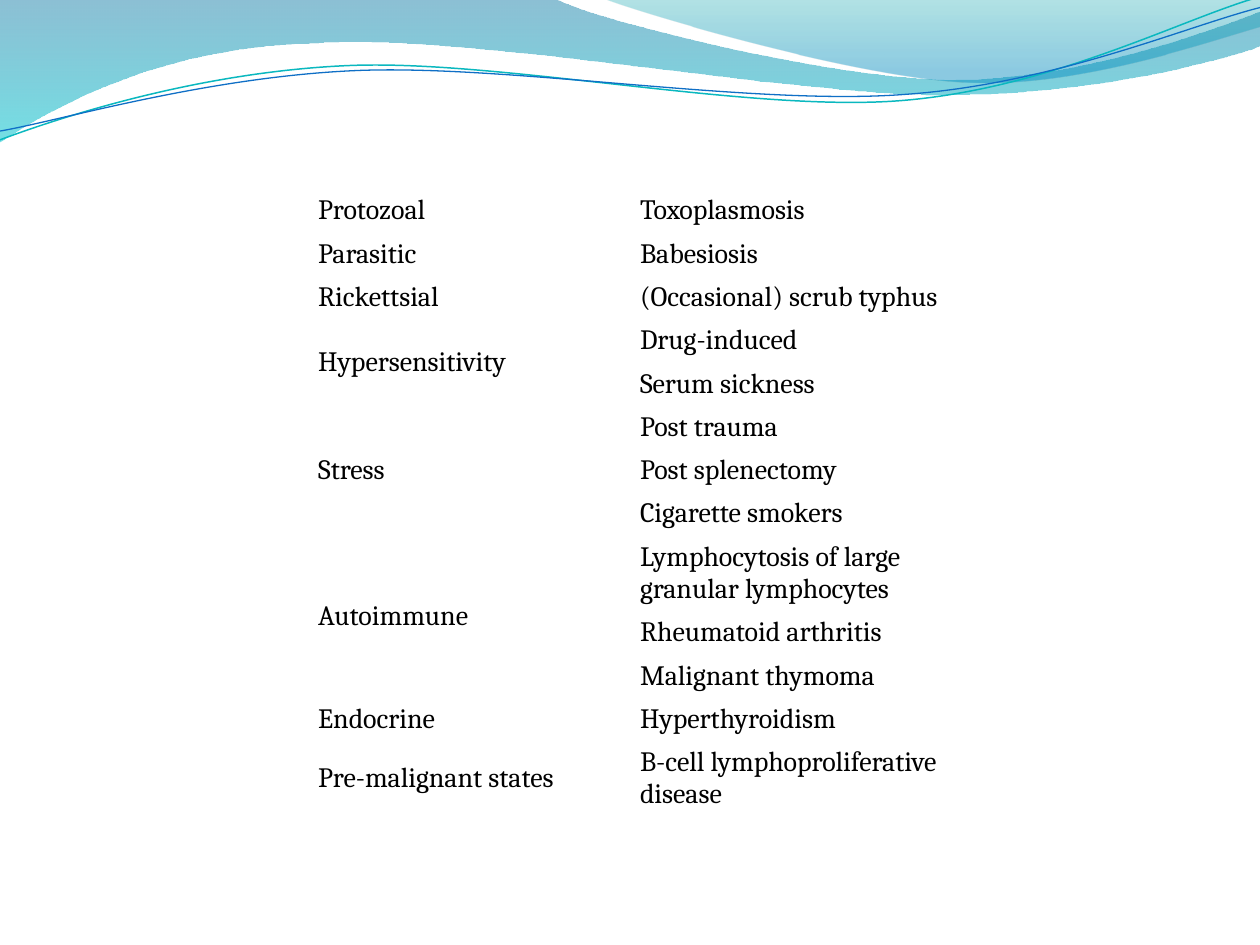
from math import cos, radians, sin

from lxml.etree import SubElement
from pptx import Presentation
from pptx.dml.color import RGBColor
from pptx.enum.text import MSO_ANCHOR
from pptx.oxml.ns import qn
from pptx.util import Inches, Pt

COLORS = {
    "deep_blue": "0074A1", "cyan": "00C6CF", "teal": "00A1A9", "sky": "008BBF",
    "teal_line": "0AB8BF", "blue_line": "0F6FC6", "text": "000000",
}

# Outlines in inches from the corner of the header: a pair is a straight step,
# six numbers are a cubic curve (two control points and an end point).
WIDE_WAVE = [
    (0, 0), (4.4, -0.01), (4.76, 0.17, 6.64, 0.63, 7.58, 0.63),
    (8.53, 0.63, 9.58, 0.26, 10, 0.09), (10.01, 0.36),
    (9.83, 0.44, 8.7, 0.76, 7.46, 0.75), (6.22, 0.75, 3.82, 0.28, 2.57, 0.34),
    (1.29, 0.36, 0.46, 0.83, -0.01, 1.13), (0, 0),
]
RIGHT_WAVE = [
    (4.79, -0.01), (5.09, 0.11, 6.82, 0.62, 7.69, 0.65),
    (8.56, 0.69, 9.61, 0.32, 10, 0.21), (10, 0), (4.79, -0.01),
]
TEAL_STROKE = [
    (0, 1.11), (0.48, 0.93, 1.58, 0.57, 2.77, 0.52),
    (3.95, 0.47, 5.93, 0.89, 7.13, 0.8), (8.33, 0.71, 9.38, 0.15, 9.98, -0.02),
]
BLUE_STROKE = [
    (0, 1.04), (0.47, 0.96, 1.64, 0.61, 2.83, 0.56),
    (4.03, 0.51, 5.97, 0.84, 7.17, 0.75), (8.36, 0.67, 9.41, 0.21, 10, 0.06),
]
# Outline and gradient stops (position, colour, opacity in percent)
WAVES = [
    (WIDE_WAVE, [(0, "deep_blue", 45), (1, "cyan", 55)]),
    (RIGHT_WAVE, [(0, "teal", 30), (0.8, "sky", 45)]),
]
STROKES = [(TEAL_STROKE, "teal_line", 0.85), (BLUE_STROKE, "blue_line", 0.75)]
STROKE_TILT = 2.7
STROKE_CENTER = (4.99, 0.58)

CAUSES = [
    ("Protozoal", ["Toxoplasmosis"]),
    ("Parasitic", ["Babesiosis"]),
    ("Rickettsial", ["(Occasional) scrub typhus"]),
    ("Hypersensitivity", ["Drug-induced", "Serum sickness"]),
    ("Stress", ["Post trauma", "Post splenectomy", "Cigarette smokers"]),
    ("Autoimmune", ["Lymphocytosis of large granular lymphocytes",
                    "Rheumatoid arthritis", "Malignant thymoma"]),
    ("Endocrine", ["Hyperthyroidism"]),
    ("Pre-malignant states", ["B-cell lymphoproliferative disease"]),
]
ROW_HEIGHT, TALL_ROW_HEIGHT = Inches(0.31), Inches(0.54)
ONE_LINE_CHARACTERS = 26
CELL_FORMAT = {
    "vertical_anchor": MSO_ANCHOR.MIDDLE,
    "margin_left": Pt(5.4), "margin_right": Pt(5.4),
    "margin_top": Pt(3.2), "margin_bottom": Pt(3.2),
}
FONT_FORMAT = {"name": "Cambria", "size": Pt(16), "bold": False}
TABLE_FORMAT = {"first_row": False, "horz_banding": False}


def rgb(name):
    return RGBColor.from_string(COLORS[name])


def set_all(target, values):
    for name, value in values.items():
        setattr(target, name, value)


def level(point):
    """Turn a point of a tilted stroke back to where it lies untilted."""
    angle = radians(STROKE_TILT)
    center_x, center_y = STROKE_CENTER
    x, y = point[0] - center_x, point[1] - center_y
    return (center_x + x * cos(angle) - y * sin(angle),
            center_y + x * sin(angle) + y * cos(angle))


def add_outline(shapes, left, top, outline, tilted=False):
    points = [pair for step in outline for pair in zip(step[::2], step[1::2])]
    if tilted:
        points = [level(point) for point in points]
    corners = [(left + Inches(x), top + Inches(y)) for x, y in points]
    builder = shapes.build_freeform(*corners[0])
    builder.add_line_segments(corners[1:], close=outline[0] == outline[-1])
    shape = builder.convert_to_shape()
    shape.shadow.inherit = False
    if tilted:
        shape.rotation = 360 - STROKE_TILT
    bend(shape, outline)
    return shape


def bend(shape, outline):
    """Join the three straight steps that stand for each curve into one cubic."""
    lines = iter(list(shape._element.iter(qn("a:lnTo"))))
    for step in outline[1:]:
        first, *others = [next(lines) for _ in step[::2]]
        if others:
            first.tag = qn("a:cubicBezTo")
        for other in others:
            first.append(other[0])
            other.getparent().remove(other)


def fill_downward(shape, stops):
    shape.fill.gradient()
    shape.fill.gradient_angle = 270
    for stop, (position, color, opacity) in zip(shape.fill.gradient_stops, stops):
        stop.position = position
        stop.color.rgb = rgb(color)
    tints = shape.fill._xPr.iter(qn("a:srgbClr"))
    for tint, (position, color, opacity) in zip(tints, stops):
        SubElement(tint, qn("a:alpha"), val=str(opacity * 1000))


def add_header(page, left, top):
    for outline, stops in WAVES:
        wave = add_outline(page.shapes, left, top, outline)
        fill_downward(wave, stops)
        wave.line.fill.background()
    strokes = page.shapes.add_group_shape()
    for outline, color, width in STROKES:
        stroke = add_outline(strokes.shapes, left, top, outline, tilted=True)
        stroke.fill.background()
        stroke.line.color.rgb = rgb(color)
        stroke.line.width = Pt(width)


def write_cell(cell, text):
    set_all(cell, CELL_FORMAT)
    span = cell.text_frame.paragraphs[0].add_run()
    span.text = text
    set_all(span.font, FONT_FORMAT)
    span.font.color.rgb = rgb("text")


def add_causes_table(page, left, top, width, height):
    examples = [example for _, group in CAUSES for example in group]
    frame = page.shapes.add_table(len(examples), 2, left, top, width, height)
    table = frame.table
    set_all(table, TABLE_FORMAT)
    for row, example in zip(table.rows, examples):
        tall = len(example) > ONE_LINE_CHARACTERS
        row.height = TALL_ROW_HEIGHT if tall else ROW_HEIGHT
    frame.height = height
    for cell in table.iter_cells():
        cell.fill.background()

    first = 0
    for category, group in CAUSES:
        last = first + len(group) - 1
        if last > first:
            table.cell(first, 0).merge(table.cell(last, 0))
        write_cell(table.cell(first, 0), category)
        for row, example in enumerate(group, first):
            write_cell(table.cell(row, 1), example)
        first = last + 1


def main():
    deck = Presentation()
    deck.slide_width, deck.slide_height = Inches(10), Inches(7.5)
    page = deck.slides.add_slide(deck.slide_layouts[6])
    add_header(page, Inches(0), Inches(0))
    add_causes_table(page, Inches(2.45), Inches(1.5), Inches(5.11), Inches(5.53))
    deck.save("out.pptx")


if __name__ == "__main__":
    main()
